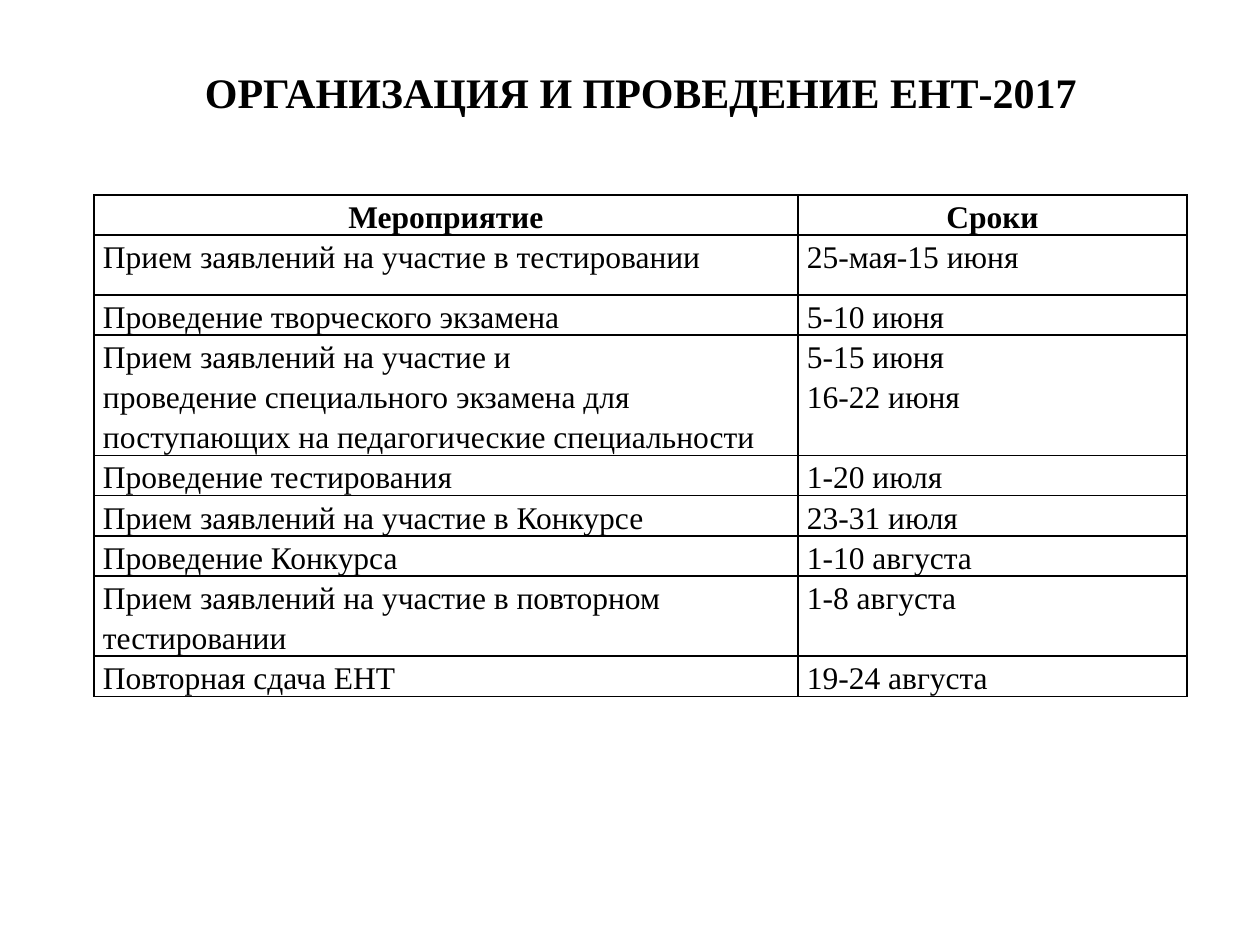
import pptx
import pptx.dml.color
import pptx.enum.text
import pptx.oxml
import pptx.oxml.ns
import pptx.util

PX = 914400 / 126
FONT = "Times New Roman"
BLACK = "000000"
CENTER = pptx.enum.text.PP_ALIGN.CENTER
LEFT = pptx.enum.text.PP_ALIGN.LEFT


def px(length):
    return pptx.util.Emu(round(length * PX))


def add_run(paragraph, text, size, bold, color=BLACK):
    run = paragraph.add_run()
    run.text = text
    run.font.name = FONT
    run.font.size = pptx.util.Pt(size)
    run.font.bold = bold
    run.font.color.rgb = pptx.dml.color.RGBColor.from_string(color)


# Row height, event paragraphs, date paragraphs
schedule = [
    (40, ["Мероприятие"], ["Сроки"]),
    (60, ["Прием заявлений на участие в тестировании"], ["25-мая-15 июня"]),
    (40, ["Проведение творческого экзамена"], ["5-10 июня"]),
    (120, ["Прием заявлений на участие и",
           "проведение специального экзамена для поступающих на педагогические специальности"],
     ["5-15 июня", "16-22 июня"]),
    (40, ["Проведение тестирования"], ["1-20 июля"]),
    (40, ["Прием заявлений на участие в Конкурсе"], ["23-31 июля"]),
    (40, ["Проведение Конкурса"], ["1-10 августа"]),
    (80, ["Прием заявлений на участие в повторном тестировании"], ["1-8 августа"]),
    (40, ["Повторная сдача ЕНТ"], ["19-24 августа"]),
]
column_widths = [704, 389]

prs = pptx.Presentation()
prs.slide_width, prs.slide_height = px(1260), px(945)
slide = prs.slides.add_slide(prs.slide_layouts[6])

table_height = sum(height for height, *_ in schedule)
timetable = slide.shapes.add_table(
    len(schedule), len(column_widths),
    px(94), px(195), px(sum(column_widths)), px(table_height)).table
for column, width in zip(timetable.columns, column_widths):
    column.width = px(width)

for row_index, (height, *entries) in enumerate(schedule):
    is_header = row_index == 0
    timetable.rows[row_index].height = px(height)
    for cell, lines in zip(timetable.rows[row_index].cells, entries):
        cell.margin_left = cell.margin_right = px(9)
        cell.margin_top = cell.margin_bottom = 0
        for side in ("lnL", "lnR", "lnT", "lnB"):
            border = pptx.oxml.parse_xml(
                f'<a:{side} {pptx.oxml.ns.nsdecls("a")} w="12700"><a:solidFill>'
                f'<a:srgbClr val="{BLACK}"/></a:solidFill></a:{side}>')
            cell._tc.get_or_add_tcPr().append(border)
        cell.fill.background()
        for line_index, line in enumerate(lines):
            frame = cell.text_frame
            paragraph = frame.add_paragraph() if line_index else frame.paragraphs[0]
            paragraph.alignment = CENTER if is_header else LEFT
            paragraph.line_spacing = 1.15
            add_run(paragraph, line, 18, is_header)

heading = slide.shapes.add_textbox(px(74), px(55), px(1134), px(74)).text_frame
heading.word_wrap = True
heading.vertical_anchor = pptx.enum.text.MSO_ANCHOR.MIDDLE
heading.paragraphs[0].alignment = CENTER
add_run(heading.paragraphs[0], "ОРГАНИЗАЦИЯ И ПРОВЕДЕНИЕ ЕНТ-2017", 24, True)

prs.save("out.pptx")
